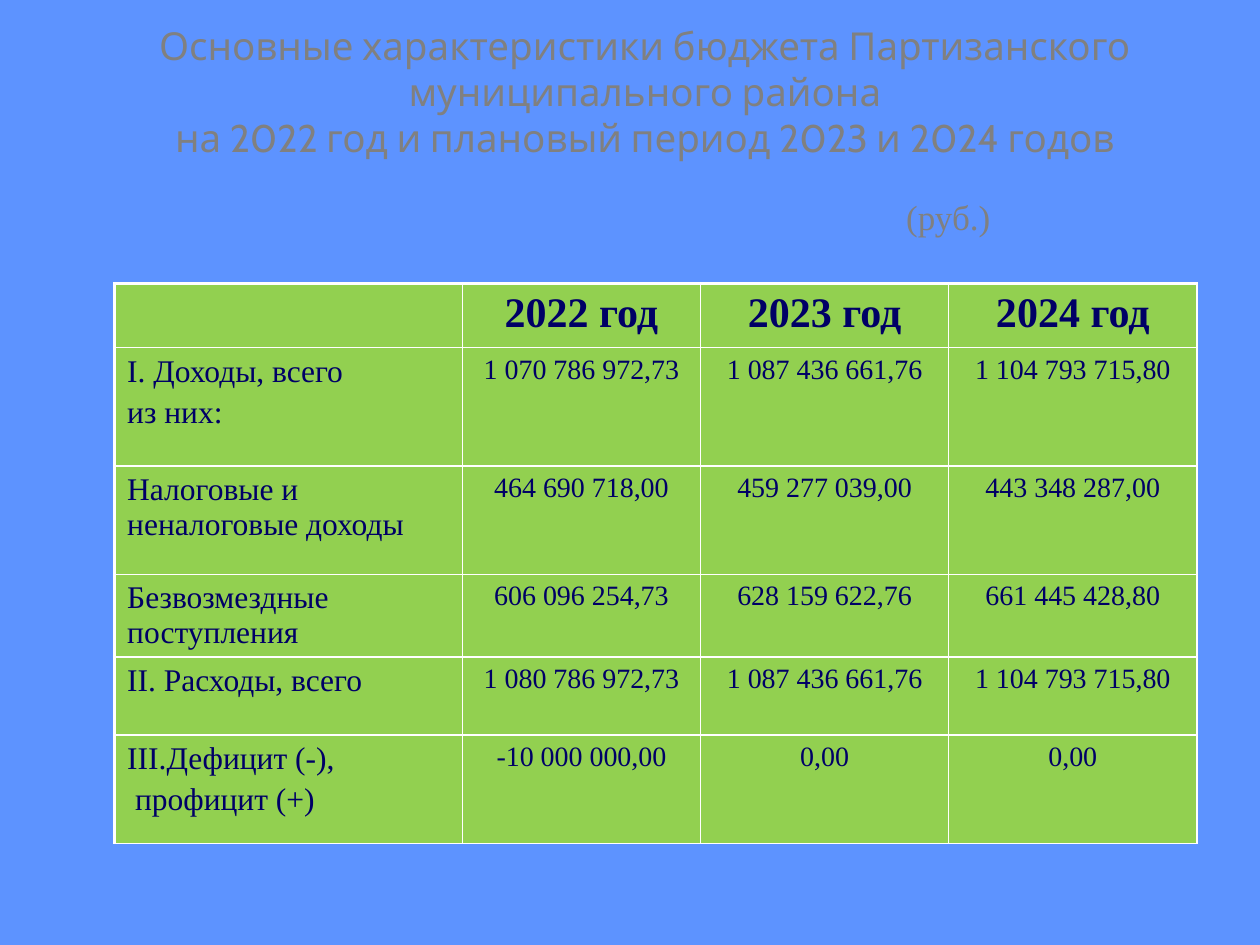
"""Build the slide with the main figures of the district budget."""
from dataclasses import dataclass

from lxml import etree
from pptx import Presentation
from pptx import util as u
from pptx.dml.color import RGBColor
from pptx.enum import text
from pptx.oxml import ns

SKY = RGBColor(0x5D, 0x93, 0xFF)
GREEN = RGBColor(0x92, 0xD0, 0x50)
NAVY = RGBColor(0x00, 0x00, 0x66)
GRAY = RGBColor(0x80, 0x80, 0x80)
WHITE = RGBColor(0xFF, 0xFF, 0xFF)
SERIF = "Times New Roman"
SANS = "Cabin"
CENTER = text.PP_ALIGN.CENTER
LEFT = text.PP_ALIGN.LEFT
RIGHT = text.PP_ALIGN.RIGHT

COLUMN_WIDTHS = (2.76, 1.89, 1.97, 1.97)
THIN, THICK = 1, 2.25


@dataclass(frozen=True)
class BudgetRow:
    labels: tuple[str, ...]
    values: tuple[str, str, str]
    height: float


@dataclass(frozen=True)
class Style:
    size: float
    color: RGBColor
    font: str = SERIF
    bold: bool = False


HEADER = Style(24, NAVY, bold=True)
LABEL = Style(18, NAVY)
VALUE = Style(16, NAVY)
HEADING = Style(22, GRAY, SANS)
UNIT = Style(20, GRAY)

ROWS = (
    BudgetRow((), ("2022 год", "2023 год", "2024 год"), 0.51),
    BudgetRow(("I. Доходы, всего", "из них:"),
              ("1 070 786 972,73", "1 087 436 661,76", "1 104 793 715,80"), 0.94),
    BudgetRow(("Налоговые и неналоговые доходы",),
              ("464 690 718,00", "459 277 039,00", "443 348 287,00"), 0.86),
    BudgetRow(("Безвозмездные поступления",),
              ("606 096 254,73", "628 159 622,76", "661 445 428,80"), 0.65),
    BudgetRow(("II. Расходы, всего",),
              ("1 080 786 972,73", "1 087 436 661,76", "1 104 793 715,80"), 0.62),
    BudgetRow(("III.Дефицит (-),", " профицит (+)"),
              ("-10 000 000,00", "0,00", "0,00"), 0.86),
)


def add_span(para, words: str, style: Style) -> None:
    span = para.add_run()
    span.text = words
    span.font.size = u.Pt(style.size)
    span.font.name = style.font
    span.font.bold = style.bold
    span.font.color.rgb = style.color


def set_border(cell, side: str, width: float) -> None:
    line = etree.Element(ns.qn(f"a:ln{side}"), w=str(u.Pt(width)))
    fill = etree.SubElement(line, ns.qn("a:solidFill"))
    etree.SubElement(fill, ns.qn("a:srgbClr"), val=str(WHITE))
    properties = cell._tc.get_or_add_tcPr()
    properties.insert("LRTB".index(side), line)


def fill_cell(cell, lines: tuple[str, ...], style: Style, align) -> None:
    cell.fill.solid()
    cell.fill.fore_color.rgb = GREEN
    frame = cell.text_frame
    for index, words in enumerate(lines):
        para = frame.add_paragraph() if index else frame.paragraphs[0]
        para.alignment = align
        if index:
            para.space_before = u.Pt(style.size * 0.2)
        add_span(para, words, style)


def add_title(page) -> None:
    box = page.shapes.title
    box.left, box.top = u.Inches(0.86), u.Inches(0.23)
    box.width, box.height = u.Inches(8.52), u.Inches(1.6)
    frame = box.text_frame
    frame.word_wrap = True
    frame.auto_size = text.MSO_AUTO_SIZE.NONE
    frame.vertical_anchor = text.MSO_ANCHOR.MIDDLE
    para = frame.paragraphs[0]
    para.alignment = CENTER
    add_span(para, "Основные характеристики бюджета Партизанского "
                   "муниципального района", HEADING)
    para.add_line_break()
    add_span(para, "на 2022 год и плановый период 2023 и 2024 годов", HEADING)
    unit = frame.add_paragraph()
    unit.alignment = RIGHT
    unit.space_before = u.Pt(20)
    unit._p.get_or_add_pPr().set("marR", str(u.Inches(1.42)))
    add_span(unit, "(руб.)", UNIT)


def add_budget_table(page, rows: tuple[BudgetRow, ...]) -> None:
    table = page.shapes.add_table(
        len(rows), len(COLUMN_WIDTHS), u.Inches(0.91), u.Inches(2.25),
        u.Inches(sum(COLUMN_WIDTHS)), u.Inches(sum(row.height for row in rows))).table
    for column, width in zip(table.columns, COLUMN_WIDTHS):
        column.width = u.Inches(width)
    for row_index, row in enumerate(rows):
        table.rows[row_index].height = u.Inches(row.height)
        contents = (row.labels, *((value,) for value in row.values))
        for column_index, lines in enumerate(contents):
            cell = table.cell(row_index, column_index)
            if column_index == 0:
                fill_cell(cell, lines, LABEL, LEFT)
            else:
                fill_cell(cell, lines, VALUE if row_index else HEADER, CENTER)
            set_border(cell, "L", THIN if column_index else THICK)
            set_border(cell, "R", THIN)
            set_border(cell, "T", THIN if row_index else THICK)
            set_border(cell, "B", THIN)


def main() -> None:
    deck = Presentation()
    deck.slide_width, deck.slide_height = u.Inches(10), u.Inches(7.5)
    page = deck.slides.add_slide(deck.slide_layouts.get_by_name("Title Only"))
    page.background.fill.solid()
    page.background.fill.fore_color.rgb = SKY
    add_title(page)
    add_budget_table(page, ROWS)
    deck.save("out.pptx")


if __name__ == "__main__":
    main()
